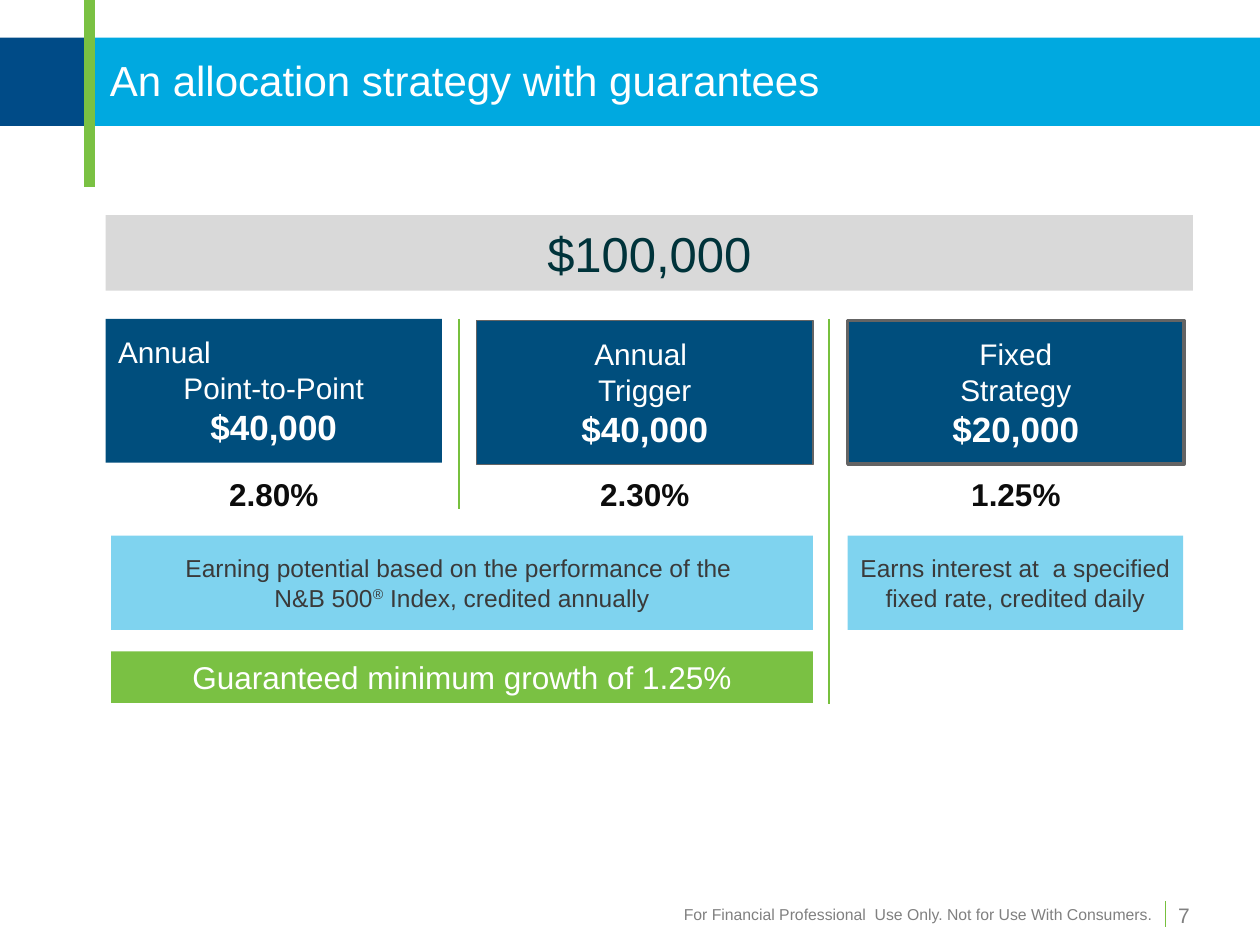
import pptx
import pptx.dml.color
import pptx.enum.shapes
import pptx.enum.text
import pptx.oxml
import pptx.oxml.ns
import pptx.util

Cm = pptx.util.Cm
Pt = pptx.util.Pt
Align = pptx.enum.text.PP_ALIGN
Anchor = pptx.enum.text.MSO_ANCHOR

NAVY, DEEP_BLUE, SKY = "004B87", "004E7D", "00A9E0"
GREEN, RULE_GREEN = "7AC143", "77C03E"
WHITE, PALE_GRAY, GRAY, BORDER = "FFFFFF", "D9D9D9", "808080", "646464"
INK, TEAL, BLACK = "3A3A3A", "00333A", "0C0C0C"


def color(value):
    return pptx.dml.color.RGBColor.from_string(value)


class Slide:
    font = "Arial"

    def __init__(self, page):
        self.page = page

    def fill_text(self, frame, text, size, ink, bold=False,
                  align=Align.CENTER, anchor=Anchor.MIDDLE):
        frame.word_wrap = True
        frame.vertical_anchor = anchor
        frame.text = text
        for para in frame.paragraphs:
            para.alignment = align
            for span in para.runs:
                self.style(span, size, ink, bold)

    def style(self, span, size, ink, bold=False):
        span.font.name = self.font
        span.font.size = Pt(size)
        span.font.bold = bold
        span.font.color.rgb = color(ink)

    def title(self, text, left, top, width, height):
        """Place the title in front of everything drawn so far."""
        box = self.page.shapes.title
        box.element.getparent().append(box.element)
        box.left, box.top, box.width, box.height = map(Cm, (left, top, width, height))
        self.fill_text(box.text_frame, text, 24, WHITE, align=Align.LEFT)

    def block(self, left, top, width, height, fill, opacity=None, border=0):
        shape = self.page.shapes.add_shape(
            pptx.enum.shapes.MSO_SHAPE.RECTANGLE,
            Cm(left), Cm(top), Cm(width), Cm(height))
        shape.shadow.inherit = False
        shape.fill.solid()
        shape.fill.fore_color.rgb = color(fill)
        if opacity is not None:
            tint = shape.element.spPr.find(".//" + pptx.oxml.ns.qn("a:srgbClr"))
            alpha = pptx.oxml.parse_xml(
                f'<a:alpha {pptx.oxml.ns.nsdecls("a")} val="{opacity * 1000}"/>')
            tint.append(alpha)
        if border:
            shape.line.color.rgb = color(BORDER)
            shape.line.width = Pt(border)
        else:
            shape.line.fill.background()
        return shape.text_frame

    def label(self, left, top, width, height, text, size, ink, **options):
        box = self.page.shapes.add_textbox(Cm(left), Cm(top), Cm(width), Cm(height))
        self.fill_text(box.text_frame, text, size, ink, **options)
        return box.text_frame

    def vertical_line(self, x, top, bottom, ink, width=0.75):
        line = self.page.shapes.add_connector(
            pptx.enum.shapes.MSO_CONNECTOR.STRAIGHT, Cm(x), Cm(top), Cm(x), Cm(bottom))
        line.line.color.rgb = color(ink)
        line.line.width = Pt(width)
        line._element.spPr.append(
            pptx.oxml.parse_xml(f'<a:effectLst {pptx.oxml.ns.nsdecls("a")}/>'))

    def card(self, left, top, name, amount, rate, border):
        width = 6.78
        frame = self.block(left, top, width, 2.9, DEEP_BLUE, border=border)
        self.fill_text(frame, f"{name}\n{amount}", 17, WHITE)
        self.style(frame.paragraphs[-1].runs[0], 20, WHITE, bold=True)
        self.label(left, 9.45, width, 0.81, rate, 18, BLACK,
                   bold=True, anchor=Anchor.TOP)
        return frame


def main():
    deck = pptx.Presentation()
    deck.slide_width, deck.slide_height = Cm(25.4), Cm(19.05)
    slide = Slide(deck.slides.add_slide(deck.slide_layouts[5]))

    # Header and footer
    slide.block(1.83, 0.76, 23.57, 1.78, SKY)
    slide.block(0, 0.76, 1.83, 1.78, NAVY)
    slide.vertical_line(1.8, 0, 3.76, GREEN, 6)
    slide.title("An allocation strategy with guarantees", 1.96, 0.84, 22.83, 1.52)
    footer = slide.label(
        7.19, 18.11, 16.28, 0.51,
        "For Financial Professional  Use Only. Not for Use With Consumers.",
        9, GRAY, align=Align.RIGHT, anchor=Anchor.BOTTOM)
    footer.margin_bottom = 0
    slide.label(23.5, 18.06, 1.04, 0.76, "7", 12, GRAY,
                align=Align.LEFT, anchor=Anchor.TOP)
    slide.vertical_line(23.5, 18.16, 18.69, RULE_GREEN)

    # Total and its three allocations
    total = slide.block(2.13, 4.34, 21.92, 1.52, PALE_GRAY)
    slide.fill_text(total, "$100,000", 28, TEAL)
    first_left, step = 2.13, 7.48
    allocations = [
        ("Annual\nPoint-to-Point", "$40,000", "2.80%", 6.43, 0),
        ("Annual \nTrigger", "$40,000", "2.30%", 6.46, 0.75),
        ("Fixed\nStrategy", "$20,000", "1.25%", 6.46, 2),
    ]
    cards = [
        slide.card(first_left + step * column, top, name, amount, rate, border)
        for column, (name, amount, rate, top, border) in enumerate(allocations)
    ]
    cards[0].paragraphs[0].alignment = Align.LEFT

    # How each allocation earns
    index_left, index_width = 2.24, 14.15
    earning = slide.block(index_left, 10.8, index_width, 1.9, SKY, opacity=50)
    slide.fill_text(
        earning, "Earning potential based on the performance of the \nN&B 500", 14, INK)
    index_line = earning.paragraphs[-1]
    for text, baseline in (("®", 30000), (" Index, credited annually", 0)):
        span = index_line.add_run()
        span.text = text
        slide.style(span, 14, INK)
        span.font._element.set("baseline", str(baseline))
    fixed = slide.block(first_left + 2 * step, 10.8, 6.76, 1.9, SKY, opacity=50)
    slide.fill_text(
        fixed, "Earns interest at  a specified fixed rate, credited daily", 14, INK)
    guarantee = slide.block(index_left, 13.13, index_width, 1.04, GREEN)
    slide.fill_text(guarantee, "Guaranteed minimum growth of 1.25%", 18, WHITE)

    # Dividers between the columns
    slide.vertical_line(9.25, 6.43, 10.26, RULE_GREEN)
    slide.vertical_line(16.71, 6.43, 14.2, RULE_GREEN)

    deck.save("out.pptx")


if __name__ == "__main__":
    main()
